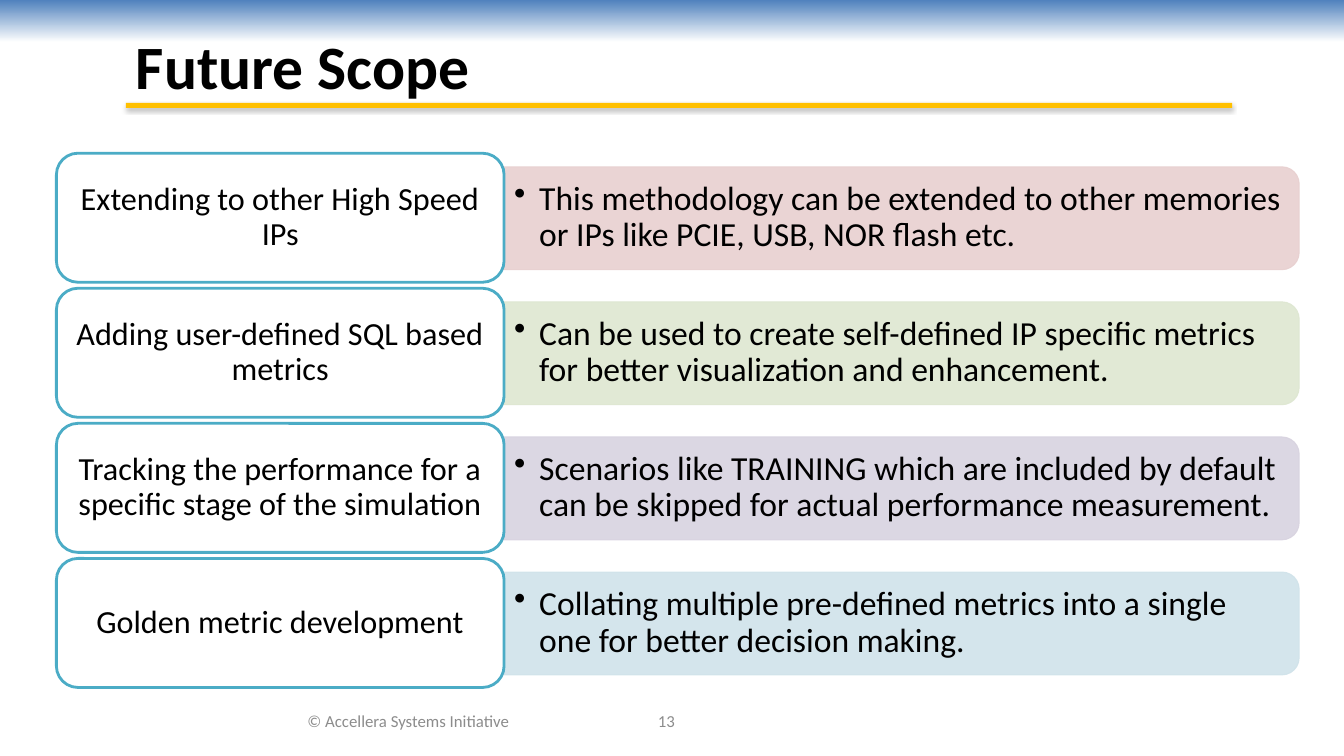
from dataclasses import dataclass

from lxml import etree
from pptx import Presentation
from pptx import util as u
from pptx.dml.color import RGBColor
from pptx.enum import shapes, text
from pptx.oxml import ns

TITLE = "Future Scope"
FOOTERS = [
    ("© Accellera Systems Initiative", (244, 695, 322, 40)),
    ("13", (533, 695, 256, 40)),
]
TOPICS = [
    ("Extending to other High Speed IPs",
     "This methodology can be extended to other memories or IPs like PCIE, USB, NOR flash etc.",
     "E8D0D0"),
    ("Adding user-defined SQL based metrics",
     "Can be used to create self-defined IP specific metrics for better visualization and enhancement.",
     "DEE7D1"),
    ("Tracking the performance for a specific stage of the simulation",
     "Scenarios like TRAINING which are included by default can be skipped for actual performance measurement.",
     "D8D3E0"),
    ("Golden metric development",
     "Collating multiple pre-defined metrics into a single one for better decision making.",
     "D0E3EA"),
]


@dataclass(frozen=True)
class Theme:
    font: str = "Calibri"
    ink: str = "000000"
    muted: str = "8C8C8C"
    paper: str = "FFFFFF"
    banner: str = "4F81BD"
    rule: str = "FFC000"
    card_line: str = "4BACC6"
    title_size: int = 44
    detail_size: int = 24
    label_size: int = 23
    footer_size: int = 12
    bar_alpha: int = 90


THEME = Theme()
PX = 9144
SLIDE_WIDTH, SLIDE_HEIGHT = 1333, 750
ROW_TOP, ROW_PITCH = 152, 134
CARD_LEFT, CARD_WIDTH, CARD_HEIGHT = 56, 444, 128
BAR_WIDTH, BAR_HEIGHT = 789, 102
DETAIL_WIDTH, DETAIL_HEIGHT = 784, 92
BULLET_INDENT = 25


def place(box):
    return [value * PX for value in box]


def colour(value):
    return RGBColor.from_string(value)


def add_block(slide, kind, box, fill=None, line=None, line_width=0):
    shape = slide.shapes.add_shape(kind, *place(box))
    shape.shadow.inherit = False
    if fill:
        shape.fill.solid()
        shape.fill.fore_color.rgb = colour(fill)
    if line:
        shape.line.color.rgb = colour(line)
        shape.line.width = u.Pt(line_width)
    else:
        shape.line.fill.background()
    return shape


def write(shape, words, size, ink=THEME.ink, align=text.PP_ALIGN.LEFT, bold=False, spacing=None):
    frame = shape.text_frame
    frame.word_wrap = True
    frame.vertical_anchor = text.MSO_ANCHOR.MIDDLE
    frame.text = words
    paragraph = frame.paragraphs[0]
    paragraph.alignment = align
    paragraph.line_spacing = spacing
    font = paragraph.runs[0].font
    font.name, font.size, font.bold = THEME.font, u.Pt(size), bold
    font.color.rgb = colour(ink)
    return paragraph


def add_text(slide, box, words, size, **style):
    return write(slide.shapes.add_textbox(*place(box)), words, size, **style)


def add_bullet(paragraph):
    properties = paragraph._p.get_or_add_pPr()
    properties.set("marL", str(BULLET_INDENT * PX))
    properties.set("indent", str(-BULLET_INDENT * PX))
    etree.SubElement(properties, ns.qn("a:buChar"), char="•")


def make_translucent(shape, percent):
    for element in shape._element.spPr.iter(ns.qn("a:srgbClr")):
        etree.SubElement(element, ns.qn("a:alpha"), val=str(percent * 1000))


def add_shadow(shape):
    effects = shape._element.spPr.find(ns.qn("a:effectLst"))
    shadow = etree.SubElement(effects, ns.qn("a:outerShdw"), blurRad=str(u.Pt(3.1)),
                              dist=str(u.Pt(1.8)), dir="5400000", rotWithShape="0")
    tint = etree.SubElement(shadow, ns.qn("a:srgbClr"), val="000000")
    etree.SubElement(tint, ns.qn("a:alpha"), val="35000")


def add_frame(slide):
    banner = add_block(slide, shapes.MSO_SHAPE.RECTANGLE, (0, 0, SLIDE_WIDTH, 42))
    banner.fill.gradient()
    banner.fill.gradient_angle = 270
    for stop, shade in zip(banner.fill.gradient_stops, (THEME.banner, THEME.paper)):
        stop.color.rgb = colour(shade)
    for words, box in FOOTERS:
        add_text(slide, box, words, THEME.footer_size, ink=THEME.muted, align=text.PP_ALIGN.CENTER)
    add_text(slide, (125, 21, 1083, 86), TITLE, THEME.title_size, bold=True)
    rule = add_block(slide, shapes.MSO_SHAPE.RECTANGLE, (125, 102, 1097, 5), THEME.rule)
    add_shadow(rule)


def add_topic(slide, row, label, detail, tint):
    top = ROW_TOP + row * ROW_PITCH
    middle = top + CARD_HEIGHT // 2
    bar_left = CARD_LEFT + CARD_WIDTH
    bar_box = (bar_left + (BAR_WIDTH - BAR_HEIGHT) // 2, middle - BAR_WIDTH // 2,
               BAR_HEIGHT, BAR_WIDTH)
    bar = add_block(slide, shapes.MSO_SHAPE.ROUND_2_SAME_RECTANGLE, bar_box, tint, tint, 0.75)
    bar.rotation = 90
    make_translucent(bar, THEME.bar_alpha)

    detail_box = (bar_left, middle - DETAIL_HEIGHT // 2, DETAIL_WIDTH, DETAIL_HEIGHT)
    add_bullet(add_text(slide, detail_box, detail, THEME.detail_size, spacing=0.9))

    card = add_block(slide, shapes.MSO_SHAPE.ROUNDED_RECTANGLE,
                     (CARD_LEFT, top, CARD_WIDTH, CARD_HEIGHT), THEME.paper, THEME.card_line, 2)
    write(card, label, THEME.label_size, align=text.PP_ALIGN.CENTER, spacing=0.9)


def main():
    presentation = Presentation()
    presentation.slide_width = SLIDE_WIDTH * PX
    presentation.slide_height = SLIDE_HEIGHT * PX
    slide = presentation.slides.add_slide(presentation.slide_layouts[6])
    add_frame(slide)
    for row, topic in enumerate(TOPICS):
        add_topic(slide, row, *topic)
    presentation.save("out.pptx")


if __name__ == "__main__":
    main()
